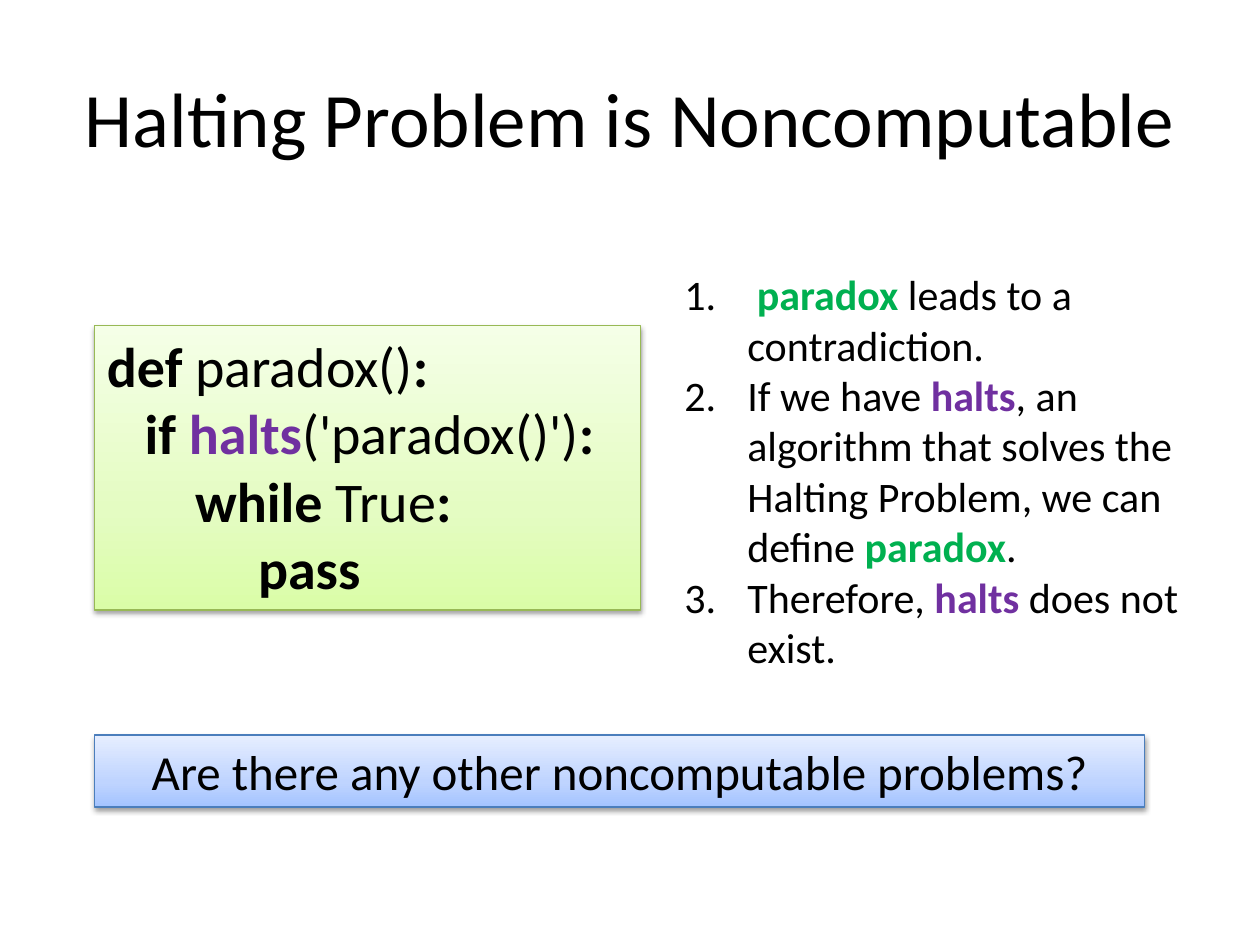
from copy import deepcopy

from lxml import etree
from pptx import Presentation
from pptx.dml.color import RGBColor
from pptx.enum.shapes import MSO_SHAPE as Shape
from pptx.enum.text import MSO_ANCHOR as Anchor, MSO_AUTO_SIZE as AutoSize, PP_ALIGN as Align
from pptx.oxml.ns import qn
from pptx.util import Inches, Pt

COLUMNS, ROWS = 120, 90
BLACK, PURPLE, GREEN = "000000", "7030A0", "00B050"
BLUE_STOPS = ("A4C4FF", "BFD4FF", "E6EEFF")
LIME_STOPS = ("DAFDA7", "E4FCC2", "F5FFE7")

HALTS = ("halts", True, PURPLE)
PARADOX = ("paradox", True, GREEN)
CODE = [
    (0, [("def ", True), "paradox()", (":", True)]),
    (0.3, [("if ", True), HALTS, "('paradox()')", (":", True)]),
    (0.7, [("while", True), " True", (":", True)]),
    (1.2, [("pass", True)]),
]
ARGUMENT = [
    [" ", PARADOX, " leads to a contradiction."],
    ["If we have ", HALTS, ", an algorithm that solves the Halting Problem, we can define ",
     PARADOX, "."],
    ["Therefore, ", HALTS, " does not exist."],
]


def rgb(value):
    """Turn a hex string into a colour."""
    return RGBColor.from_string(value)


class Deck:
    """Hold the style and the current slide, and add elements on a grid."""

    def __init__(self, font):
        """Start a presentation with one title-only slide."""
        self.font = font
        self.prs = Presentation()
        self.prs.slide_width, self.prs.slide_height = Inches(10), Inches(7.5)
        self.s = self.prs.slides.add_slide(self.prs.slide_layouts[5])

    def area(self, col, row, cols, rows):
        """Convert grid cells to left, top, width and height."""
        w, h = self.prs.slide_width / COLUMNS, self.prs.slide_height / ROWS
        return int(col * w), int(row * h), int(cols * w), int(rows * h)

    def add_runs(self, p, parts, size, align=Align.LEFT, margin=0, indent=0):
        """Fill a paragraph with plain strings and (text, bold, colour) parts."""
        p.alignment = align
        pPr = p._p.get_or_add_pPr()
        pPr.set("marL", str(Inches(margin)))
        pPr.set("indent", str(Inches(indent)))
        for part in parts:
            text, bold, color = (part, False, BLACK) if isinstance(part, str) else (*part, BLACK)[:3]
            r = p.add_run()
            r.text = text
            r.font.name, r.font.size, r.font.bold = self.font, Pt(size), bold
            r.font.color.rgb = rgb(color)

    def paragraphs(self, tf, count):
        """Set up a text frame and return its paragraphs."""
        tf.word_wrap, tf.auto_size = True, AutoSize.SHAPE_TO_FIT_TEXT
        tf.vertical_anchor = Anchor.TOP
        return [tf.paragraphs[0]] + [tf.add_paragraph() for _ in range(count - 1)]

    def title(self, text, *cells):
        """Move and fill the title placeholder."""
        sp = self.s.shapes.title
        sp.left, sp.top, sp.width, sp.height = self.area(*cells)
        sp.text_frame.vertical_anchor = Anchor.MIDDLE
        self.add_runs(sp.text_frame.paragraphs[0], [text], 44, Align.CENTER)

    def panel(self, lines, size, stops, line, *cells, align=Align.LEFT):
        """Add a gradient box with a soft shadow and indented lines."""
        sp = self.s.shapes.add_shape(Shape.RECTANGLE, *self.area(*cells))
        sp.fill.gradient()
        sp.fill.gradient_angle = 90
        spPr = sp._element.spPr
        gsLst = spPr.find(qn("a:gradFill")).find(qn("a:gsLst"))
        gsLst.append(deepcopy(gsLst[0]))
        for stop, position, color in zip(sp.fill.gradient_stops, (0, 0.35, 1), stops):
            stop.position, stop.color.rgb = position, rgb(color)
        sp.line.color.rgb, sp.line.width = rgb(line), Pt(0.75)
        sp.shadow.inherit = False
        shadow = etree.SubElement(spPr.find(qn("a:effectLst")), qn("a:outerShdw"),
                                  blurRad="40000", dist="20000", dir="5400000", rotWithShape="0")
        color = etree.SubElement(shadow, qn("a:srgbClr"), val=BLACK)
        etree.SubElement(color, qn("a:alpha"), val="38000")
        for p, (margin, parts) in zip(self.paragraphs(sp.text_frame, len(lines)), lines):
            self.add_runs(p, parts, size, align, margin)

    def numbered(self, items, size, *cells):
        """Add a text box with a numbered list."""
        sp = self.s.shapes.add_textbox(*self.area(*cells))
        for p, parts in zip(self.paragraphs(sp.text_frame, len(items)), items):
            self.add_runs(p, parts, size, margin=0.5, indent=-0.5)
            pPr = p._p.get_or_add_pPr()
            etree.SubElement(pPr, qn("a:buFont"), typeface="+mj-lt")
            etree.SubElement(pPr, qn("a:buAutoNum"), type="arabicPeriod")


def main():
    """Build and save the slide."""
    deck = Deck("Calibri")
    deck.title("Halting Problem is Noncomputable", 6, 3.6, 108, 15)
    deck.panel([(0, ["Are there any other noncomputable problems?"])], 28, BLUE_STOPS, "4B7EBC",
               9, 70, 100, 6.87, align=Align.CENTER)
    deck.panel(CODE, 32, LIME_STOPS, "98B955", 9, 31, 52, 27.1)
    deck.numbered(ARGUMENT, 24, 64, 25, 53, 40)
    deck.prs.save("out.pptx")


if __name__ == "__main__":
    main()
